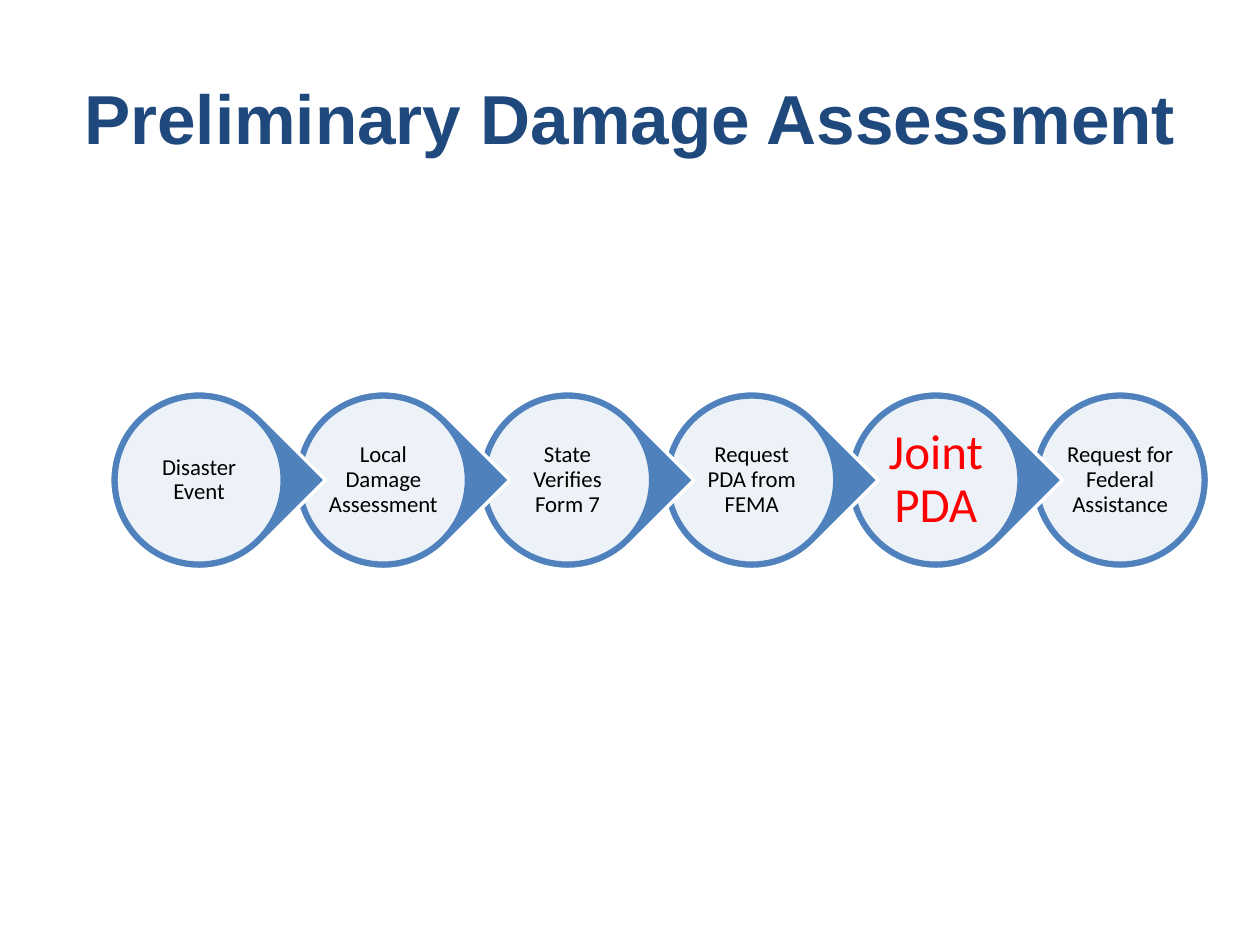
from dataclasses import dataclass

from lxml import etree
from pptx import Presentation
from pptx.dml.color import RGBColor
from pptx.enum.shapes import MSO_SHAPE as Shape
from pptx.enum.text import MSO_ANCHOR as Anchor, PP_ALIGN as Align
from pptx.oxml.ns import qn
from pptx.util import Inches, Pt

COLORS = {"navy": "1F497D", "blue": "4F81BD", "white": "FFFFFF",
          "black": "000000", "red": "FF0000"}

FIRST_CENTER, LAST_CENTER, CENTER_Y = 1.58, 8.89, 3.81
DROP_SIZE, DISC_SIZE, LABEL_SIZE = 1.42, 1.32, 0.94


@dataclass
class Step:
    label: str
    size: float = 13
    color: str = "black"
    inset: float = 0.02


STEPS = [
    Step("Disaster Event"),
    Step("Local Damage Assessment"),
    Step("State Verifies Form 7"),
    Step("Request PDA from FEMA"),
    Step("Joint PDA", 28, "red", 0.04),
    Step("Request for Federal Assistance"),
]


def rgb(name: str) -> RGBColor:
    return RGBColor.from_string(COLORS[name])


def square(cx: float, size: float) -> tuple:
    """Left, top, width and height of a square centred on the row of steps."""
    return (Inches(cx - size / 2), Inches(CENTER_Y - size / 2),
            Inches(size), Inches(size))


def add_figure(s, kind: Shape, cx: float, size: float, fill: str, line: str):
    sp = s.shapes.add_shape(kind, *square(cx, size))
    sp.shadow.inherit = False
    sp.fill.solid()
    sp.fill.fore_color.rgb = rgb(fill)
    sp.line.color.rgb = rgb(line)
    sp.line.width = Pt(2)
    return sp


def set_fill_opacity(sp, percent: int) -> None:
    color = sp.fill._xPr.find(qn("a:solidFill"))[0]
    etree.SubElement(color, qn("a:alpha")).set("val", str(percent * 1000))


def add_text(s, box: tuple, text: str, font: str, size: float, color: str,
             bold: bool = False, inset: float | None = None,
             spacing: float | None = None) -> None:
    tf = s.shapes.add_textbox(*box).text_frame
    tf.word_wrap = True
    tf.vertical_anchor = Anchor.MIDDLE
    if inset is not None:
        tf.margin_left = tf.margin_right = Inches(inset)
        tf.margin_top = tf.margin_bottom = Inches(inset)
    p = tf.paragraphs[0]
    p.alignment = Align.CENTER
    p.line_spacing = spacing
    r = p.add_run()
    r.text = text
    r.font.name = font
    r.font.size = Pt(size)
    r.font.bold = bold
    r.font.color.rgb = rgb(color)


def add_step(s, step: Step, cx: float, is_last: bool) -> None:
    """Draw one disc on its backing, which points right except on the last step."""
    kind = Shape.OVAL if is_last else Shape.TEAR
    backing = add_figure(s, kind, cx, DROP_SIZE, "blue", "white")
    if not is_last:
        backing.rotation = 45
    disc = add_figure(s, Shape.OVAL, cx, DISC_SIZE, "white", "blue")
    set_fill_opacity(disc, 90)
    add_text(s, square(cx, LABEL_SIZE), step.label, "Calibri", step.size,
             step.color, inset=step.inset, spacing=0.9)


def main() -> None:
    prs = Presentation()
    prs.slide_width, prs.slide_height = Inches(10), Inches(7.5)
    s = prs.slides.add_slide(prs.slide_layouts[6])

    title_box = (Inches(0.5), Inches(0.3), Inches(9), Inches(1.25))
    add_text(s, title_box, "Preliminary Damage Assessment", "Arial", 39.6,
             "navy", bold=True)

    last = len(STEPS) - 1
    pitch = (LAST_CENTER - FIRST_CENTER) / last
    # Right to left, so that each point overlaps the next step
    for i, step in reversed(list(enumerate(STEPS))):
        add_step(s, step, FIRST_CENTER + i * pitch, i == last)

    prs.save("out.pptx")


if __name__ == "__main__":
    main()
